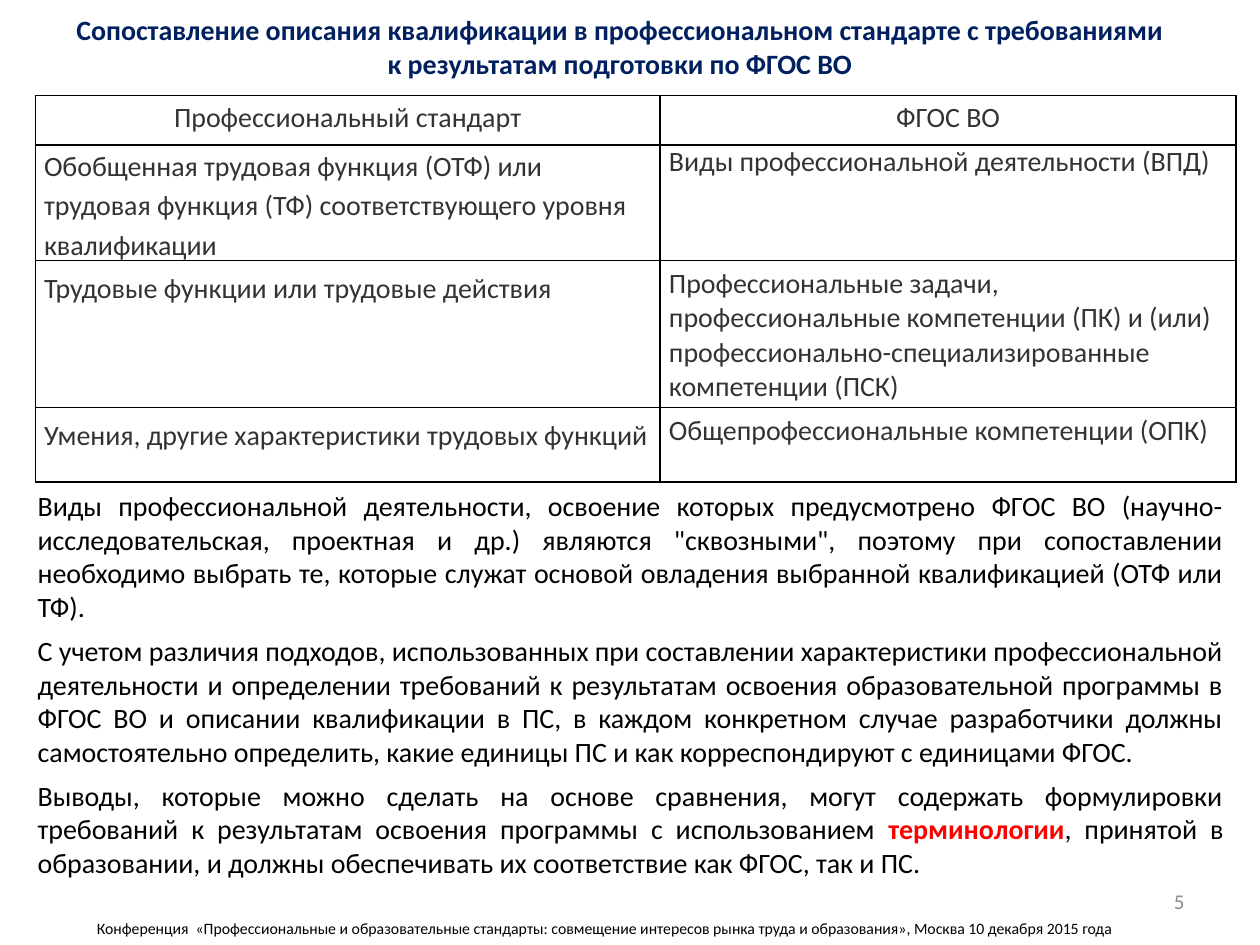
from dataclasses import dataclass
from lxml import etree
from pptx import Presentation
from pptx.dml.color import RGBColor
from pptx.enum.text import MSO_ANCHOR, PP_ALIGN
from pptx.oxml.ns import qn
from pptx.util import Inches, Pt

LEFT, MID, RIGHT, JUST = (
    PP_ALIGN.LEFT, PP_ALIGN.CENTER, PP_ALIGN.RIGHT, PP_ALIGN.JUSTIFY)
TOP, CENTRE = MSO_ANCHOR.TOP, MSO_ANCHOR.MIDDLE


@dataclass(frozen=True)
class Theme:
    font: str = "Calibri"
    black: str = "000000"
    navy: str = "002060"
    dark: str = "333333"
    grey: str = "8C8C8C"
    red: str = "FF0000"
    body: int = 16
    page: int = 12
    foot: int = 9


THEME = Theme()

TITLE = ("Сопоставление описания квалификации в профессиональном стандарте "
         "с требованиями к результатам подготовки по ФГОС ВО")
FOOTER = ("Конференция  «Профессиональные и образовательные стандарты: совмещение "
          "интересов рынка труда и образования», Москва 10 декабря 2015 года")
ROWS = [
    ("Профессиональный стандарт", "ФГОС ВО"),
    ("Обобщенная трудовая функция (ОТФ) или трудовая функция (ТФ) "
     "соответствующего уровня квалификации",
     "Виды профессиональной деятельности (ВПД)"),
    ("Трудовые функции или трудовые действия",
     "Профессиональные задачи, профессиональные компетенции (ПК) и (или) "
     "профессионально-специализированные компетенции (ПСК)"),
    ("Умения, другие характеристики трудовых функций",
     "Общепрофессиональные компетенции (ОПК)"),
]
COLS = (4.96, 4.57)
HEIGHTS = (0.39, 0.88, 1.12, 0.59)
KEY = "терминологии"
NOTES = [
    "Виды профессиональной деятельности, освоение которых предусмотрено ФГОС ВО "
    "(научно-исследовательская, проектная и др.) являются \"сквозными\", поэтому "
    "при сопоставлении необходимо выбрать те, которые служат основой овладения "
    "выбранной квалификацией (ОТФ или ТФ).",
    "С учетом различия подходов, использованных при составлении характеристики "
    "профессиональной деятельности и определении требований к результатам освоения "
    "образовательной программы в ФГОС ВО и описании квалификации в ПС, в каждом "
    "конкретном случае разработчики должны самостоятельно определить, какие единицы "
    "ПС и как корреспондируют с единицами ФГОС.",
    "Выводы, которые можно сделать на основе сравнения, могут содержать формулировки "
    "требований к результатам освоения программы с использованием " + KEY +
    ", принятой в образовании, и должны обеспечивать их соответствие как ФГОС, "
    "так и ПС.",
]


def style(run, size, color, bold=False):
    font = run.font
    font.name, font.size, font.bold = THEME.font, Pt(size), bold
    font.color.rgb = RGBColor.from_string(color)


def write(para, text, size, color, align=LEFT, bold=False, gap=0):
    para.alignment = align
    para.space_before = Pt(gap)
    head, key, tail = text.partition(KEY)
    for part in filter(None, (head, key, tail)):
        run = para.add_run()
        run.text = part
        if part == KEY:
            style(run, size, THEME.red, True)
        else:
            style(run, size, color, bold)


def add_text(slide, place, texts, size, color, align=LEFT, anchor=TOP,
             bold=False, gap=0):
    frame = slide.shapes.add_textbox(*map(Inches, place)).text_frame
    frame.word_wrap = True
    frame.vertical_anchor = anchor
    for i, text in enumerate(texts):
        para = frame.add_paragraph() if i else frame.paragraphs[0]
        write(para, text, size, color, align, bold, gap)


def frame_cell(cell):
    props = cell._tc.get_or_add_tcPr()
    for i, side in enumerate(("a:lnL", "a:lnR", "a:lnT", "a:lnB")):
        line = etree.Element(qn(side), w=str(Pt(1)))
        fill = etree.SubElement(line, qn("a:solidFill"))
        etree.SubElement(fill, qn("a:srgbClr"), val=THEME.black)
        props.insert(i, line)


def add_grid(slide):
    shape = slide.shapes.add_table(
        len(ROWS), len(COLS), Inches(0.28), Inches(0.76),
        Inches(sum(COLS)), Inches(sum(HEIGHTS)))
    table = shape.table
    table.first_row = table.horz_banding = False
    for col, width in zip(table.columns, COLS):
        col.width = Inches(width)
    for r, (texts, height) in enumerate(zip(ROWS, HEIGHTS)):
        table.rows[r].height = Inches(height)
        for c, text in enumerate(texts):
            cell = table.cell(r, c)
            cell.fill.background()
            cell.margin_left = cell.margin_right = Inches(0.07)
            cell.margin_top = cell.margin_bottom = Inches(0 if r < 2 else 0.05)
            para = cell.text_frame.paragraphs[0]
            write(para, text, THEME.body, THEME.dark, LEFT if r else MID)
            para.line_spacing = 1.15 if r == 0 or c == 0 else 1.0
            frame_cell(cell)


def main():
    deck = Presentation()
    deck.slide_width, deck.slide_height = Inches(10), Inches(7.5)
    slide = deck.slides.add_slide(deck.slide_layouts[6])
    add_text(slide, (0.67, 7.21, 8.5, 0.31), [FOOTER], THEME.foot, THEME.black,
             anchor=CENTRE)
    add_text(slide, (0.43, 0.05, 8.98, 0.71), [TITLE], THEME.body, THEME.navy,
             MID, bold=True, gap=3.2)
    add_text(slide, (7.17, 6.95, 2.33, 0.4), ["5"], THEME.page, THEME.grey,
             RIGHT, CENTRE)
    add_grid(slide)
    add_text(slide, (0.2, 3.83, 9.61, 3.5), NOTES, THEME.body, THEME.black,
             JUST, gap=6)
    deck.save("out.pptx")


if __name__ == "__main__":
    main()
